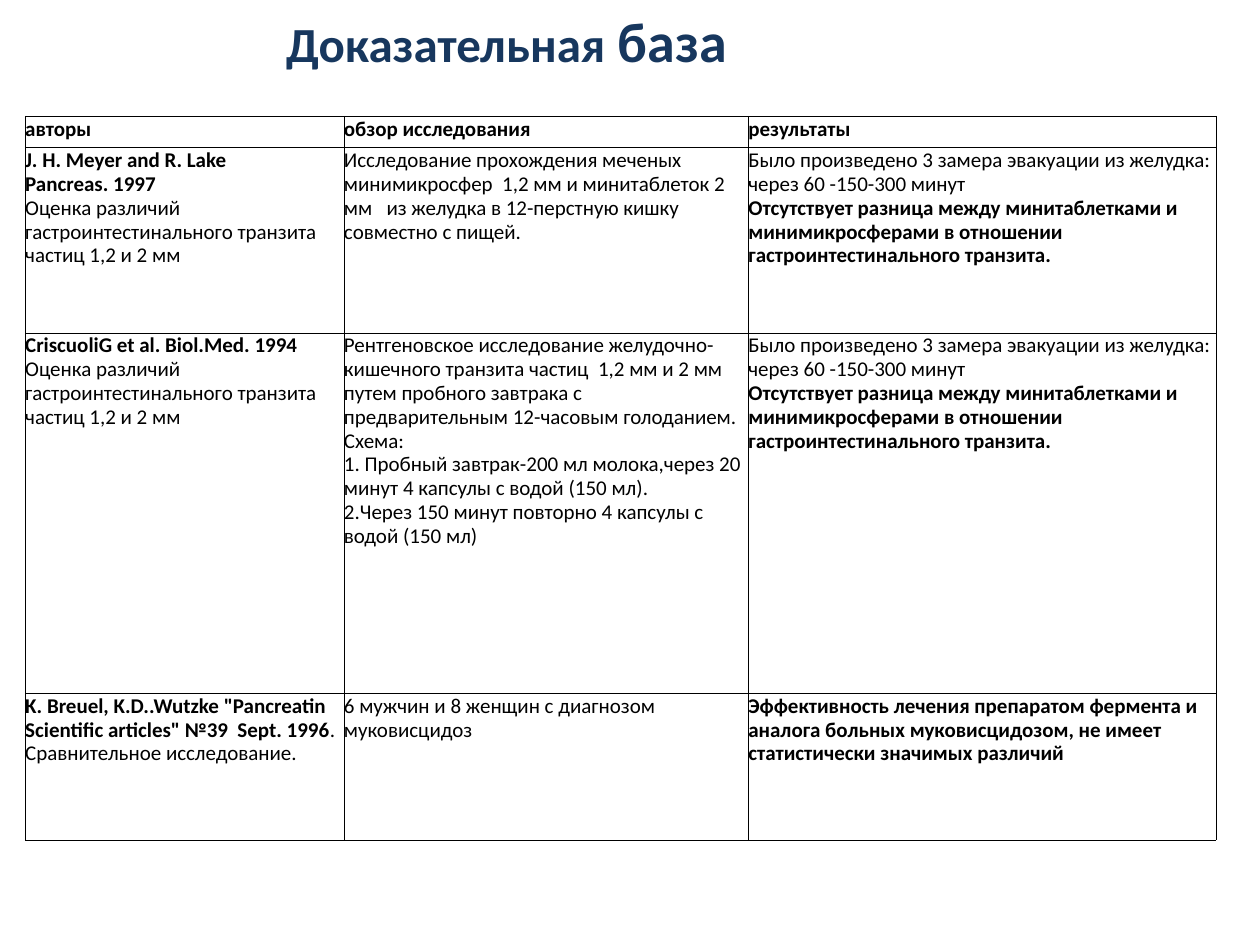
from lxml.etree import SubElement
from pptx import Presentation
from pptx.dml.color import RGBColor
from pptx.enum.text import MSO_ANCHOR as Anchor, MSO_AUTO_SIZE as AutoSize, PP_ALIGN as Align
from pptx.oxml.ns import qn
from pptx.util import Inches, Pt

# Content: a cell is a list of (text, bold) runs
HEADING = [("Доказательная", 28), (" база", 32)]
HEADERS = ["авторы", "обзор исследования", "результаты"]
AIM = ("Оценка различий гастроинтестинального транзита частиц 1,2 и 2 мм", False)
NO_DIFFERENCE = [
    ("Было произведено 3 замера эвакуации из желудка: через 60 -150-300 минут\n", False),
    ("Отсутствует разница между минитаблетками и минимикросферами "
     "в отношении гастроинтестинального транзита.", True),
]
STUDIES = [
    [
        [("J. H. Meyer and R. Lake\nPancreas. 1997\n", True), AIM],
        [("Исследование прохождения меченых минимикросфер  1,2 мм и минитаблеток 2 мм   "
          "из желудка в 12-перстную кишку совместно с пищей.", False)],
        NO_DIFFERENCE,
    ],
    [
        [("CriscuoliG et al. Biol.Med. 1994\n", True), AIM],
        [("Рентгеновское исследование желудочно-кишечного транзита частиц  1,2 мм и 2 мм "
          "путем пробного завтрака с предварительным 12-часовым голоданием.\n"
          "Схема:\n"
          "1. Пробный завтрак-200 мл молока,через 20 минут 4 капсулы с водой (150 мл).\n"
          "2.Через 150 минут повторно 4 капсулы с водой (150 мл)", False)],
        NO_DIFFERENCE,
    ],
    [
        [('K. Breuel, K.D..Wutzke "Pancreatin Scientific articles" №39  Sept. 1996', True),
         (".\nСравнительное исследование.", False)],
        [("6 мужчин и 8 женщин с диагнозом муковисцидоз", False)],
        [("Эффективность лечения препаратом фермента и аналога больных муковисцидозом, "
          "не имеет статистически значимых различий", True)],
    ],
]
GRID = [[[(header, True)] for header in HEADERS]] + STUDIES

# Layout and format
COLUMNS = [2.53, 3.21, 3.71]
ROWS = [0.25, 1.47, 2.86, 1.17]
BODY_SIZE = 12
BORDER = {"color": "000000", "width": 0.11}
CELL = {"margin_left": 0, "margin_right": 0, "margin_top": Inches(0.01),
        "margin_bottom": 0, "vertical_anchor": Anchor.TOP}
TITLE_BOX = {"left": 2.17, "top": 0, "width": 3.74, "height": 0.64}
TITLE_FRAME = {"word_wrap": False, "auto_size": AutoSize.NONE, "vertical_anchor": Anchor.TOP}


def set_all(target, values):
    for name, value in values.items():
        setattr(target, name, value)


def color(font, value):
    font.color.rgb = RGBColor.from_string(value)


def add_run(paragraph, text, size, bold, ink):
    run = paragraph.add_run()
    run.text = text
    set_all(run.font, {"name": "Calibri", "size": Pt(size), "bold": bold})
    color(run.font, ink)


def add_break(paragraph, size):
    """Line break that keeps the size of the text around it."""
    paragraph.add_line_break()
    SubElement(paragraph._p.findall(qn("a:br"))[-1], qn("a:rPr"), sz=str(size * 100))


def add_borders(cell):
    properties = cell._tc.get_or_add_tcPr()
    for index, side in enumerate(("lnL", "lnR", "lnT", "lnB")):
        line = properties.makeelement(qn(f"a:{side}"), {"w": str(int(Pt(BORDER["width"])))})
        SubElement(SubElement(line, qn("a:solidFill")), qn("a:srgbClr"), val=BORDER["color"])
        properties.insert(index, line)


def fill_cell(cell, parts):
    set_all(cell, CELL)
    cell.fill.background()
    add_borders(cell)
    paragraph = cell.text_frame.paragraphs[0]
    paragraph.line_spacing = 0.93
    for text, bold in parts:
        for index, line in enumerate(text.split("\n")):
            if index:
                add_break(paragraph, BODY_SIZE)
            if line:
                add_run(paragraph, line, BODY_SIZE, bold, "000000")


deck = Presentation()
deck.slide_width, deck.slide_height = Inches(10), Inches(7.5)
slide = deck.slides.add_slide(deck.slide_layouts[5])

# Title
title = slide.shapes.title
set_all(title, {name: Inches(value) for name, value in TITLE_BOX.items()})
set_all(title.text_frame, TITLE_FRAME)
heading = title.text_frame.paragraphs[0]
heading.alignment = Align.LEFT
for text, size in HEADING:
    add_run(heading, text, size, True, "17375E")

# Table of studies
table = slide.shapes.add_table(
    len(ROWS), len(COLUMNS), Inches(0.2), Inches(0.92),
    Inches(sum(COLUMNS)), Inches(sum(ROWS))).table
set_all(table, {"first_row": False, "horz_banding": False})
for column, width in zip(table.columns, COLUMNS):
    column.width = Inches(width)
for row, height, contents in zip(table.rows, ROWS, GRID):
    row.height = Inches(height)
    for cell, parts in zip(row.cells, contents):
        fill_cell(cell, parts)

deck.save("out.pptx")
